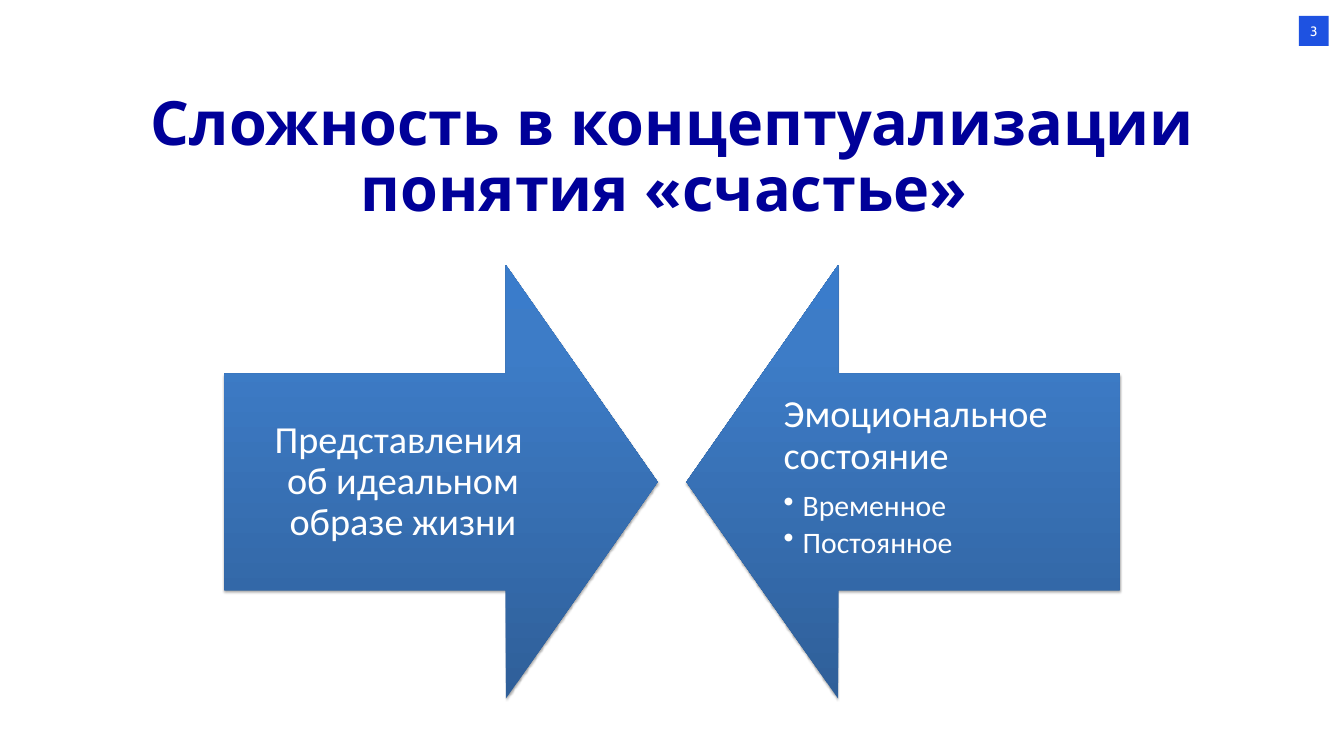
import copy
from dataclasses import dataclass

import lxml.etree
import pptx
import pptx.dml.color
import pptx.enum.shapes
import pptx.enum.text
import pptx.oxml
import pptx.oxml.ns
import pptx.util

Pt = pptx.util.Pt
SHAPE = pptx.enum.shapes.MSO_SHAPE
ALIGN = pptx.enum.text.PP_ALIGN
ANCHOR = pptx.enum.text.MSO_ANCHOR
qn = pptx.oxml.ns.qn

COLORS = {"white": "FFFFFF", "badge": "1E52E1", "title": "000099",
          "dark": "2F5F99", "mid": "3D7CC7", "light": "3A7CCB"}
ARROW_TOP, ARROW_SIDE = 312.5, 510.5
SHADOW = (
    f'<a:outerShdw xmlns:a="{pptx.oxml.ns.nsdecls("a").split(chr(34))[1]}" '
    'blurRad="39370" dist="22860" dir="5400000" rotWithShape="0">'
    '<a:srgbClr val="000000"><a:alpha val="35000"/></a:srgbClr></a:outerShdw>')


@dataclass
class Line:
    text: str
    size: float
    after: float
    align: ALIGN = ALIGN.LEFT
    bullet: bool = False


@dataclass
class Arrow:
    shape: SHAPE
    left: float
    anchor: ANCHOR
    lines: list[Line]


ARROWS = [
    Arrow(SHAPE.RIGHT_ARROW, 264.2, ANCHOR.MIDDLE,
          [Line("Представления \nоб идеальном образе жизни", 45, 15.75, ALIGN.CENTER)]),
    Arrow(SHAPE.LEFT_ARROW, 808.6, ANCHOR.TOP,
          [Line("Эмоциональное состояние", 45, 15.75),
           Line("Временное", 35, 5.25, bullet=True),
           Line("Постоянное", 35, 5.25, bullet=True)]),
]


def rgb(name: str) -> pptx.dml.color.RGBColor:
    return pptx.dml.color.RGBColor.from_string(COLORS[name])


def set_all(target, values: dict) -> None:
    for name, value in values.items():
        setattr(target, name, value)


def write(p, text: str, color: str, font: dict, layout: dict) -> None:
    p.text = text
    set_all(p, layout)
    for r in p.runs:
        set_all(r.font, font)
        r.font.color.rgb = rgb(color)


def place(sp, left: float, top: float, width: float, height: float) -> None:
    set_all(sp, {"left": Pt(left), "top": Pt(top), "width": Pt(width), "height": Pt(height)})


def set_frame(tf, margin: float, anchor: ANCHOR) -> None:
    sides = ("left", "top", "right", "bottom")
    set_all(tf, {f"margin_{side}": Pt(margin) for side in sides})
    set_all(tf, {"word_wrap": True, "vertical_anchor": anchor,
                 "auto_size": pptx.enum.text.MSO_AUTO_SIZE.NONE})


def fill_gradient(sp) -> None:
    """Shade from dark at the bottom to light at the top in three stops."""
    sp.fill.gradient()
    sp.fill.gradient_angle = 90
    stop_list = sp.fill._fill._gradFill.find(qn("a:gsLst"))
    stop_list.append(copy.deepcopy(stop_list[-1]))
    stops = (("dark", 0), ("mid", 0.8), ("light", 1))
    for stop, (color, position) in zip(sp.fill.gradient_stops, stops):
        stop.color.rgb = rgb(color)
        stop.position = position


def add_bullet(p) -> None:
    pPr = p._p.get_or_add_pPr()
    pPr.set("marL", str(Pt(22.5)))
    pPr.set("indent", str(-Pt(22.5)))
    lxml.etree.SubElement(pPr, qn("a:buChar")).set("char", "•")


def add_arrow(s, arrow: Arrow) -> None:
    sp = s.shapes.add_shape(arrow.shape, 0, 0, 0, 0)
    place(sp, arrow.left, ARROW_TOP, ARROW_SIDE, ARROW_SIDE)
    sp.adjustments[0], sp.adjustments[1] = 0.5, 0.35
    fill_gradient(sp)
    sp.line.fill.background()
    sp.shadow.inherit = False
    sp._element.spPr.find(qn("a:effectLst")).append(pptx.oxml.parse_xml(SHADOW))
    tf = sp.text_frame
    set_frame(tf, 25.2, arrow.anchor)
    for i, line in enumerate(arrow.lines):
        p = tf.add_paragraph() if i else tf.paragraphs[0]
        if line.bullet:
            add_bullet(p)
        write(p, line.text, "white", {"name": "Calibri", "size": Pt(line.size)},
              {"alignment": line.align, "line_spacing": 0.9,
               "space_after": Pt(line.after), "level": int(line.bullet)})


def add_page_number(s) -> None:
    sp = s.shapes.add_shape(SHAPE.RECTANGLE, 0, 0, 0, 0)
    place(sp, 1530, 18.7, 35.3, 35.3)
    sp.fill.solid()
    sp.fill.fore_color.rgb = rgb("badge")
    sp.line.fill.background()
    sp.shadow.inherit = False
    set_frame(sp.text_frame, 0, ANCHOR.MIDDLE)
    write(sp.text_frame.paragraphs[0], "3", "white",
          {"name": "Cabin", "size": Pt(16)}, {"alignment": ALIGN.CENTER})


def set_title(s) -> None:
    sp = s.shapes.title
    place(sp, 137.5, 109.4, 1308.2, 174.2)
    set_frame(sp.text_frame, 0, ANCHOR.TOP)
    write(sp.text_frame.paragraphs[0], "Сложность в концептуализации понятия «счастье» ",
          "title", {"name": "Noto Sans", "size": Pt(72), "bold": True},
          {"alignment": ALIGN.CENTER, "line_spacing": 0.9})


def main() -> None:
    prs = pptx.Presentation()
    set_all(prs, {"slide_width": Pt(1583.28), "slide_height": Pt(890.64)})
    s = prs.slides.add_slide(prs.slide_layouts[5])
    set_title(s)
    add_page_number(s)
    for arrow in ARROWS:
        add_arrow(s, arrow)
    prs.save("out.pptx")


if __name__ == "__main__":
    main()
